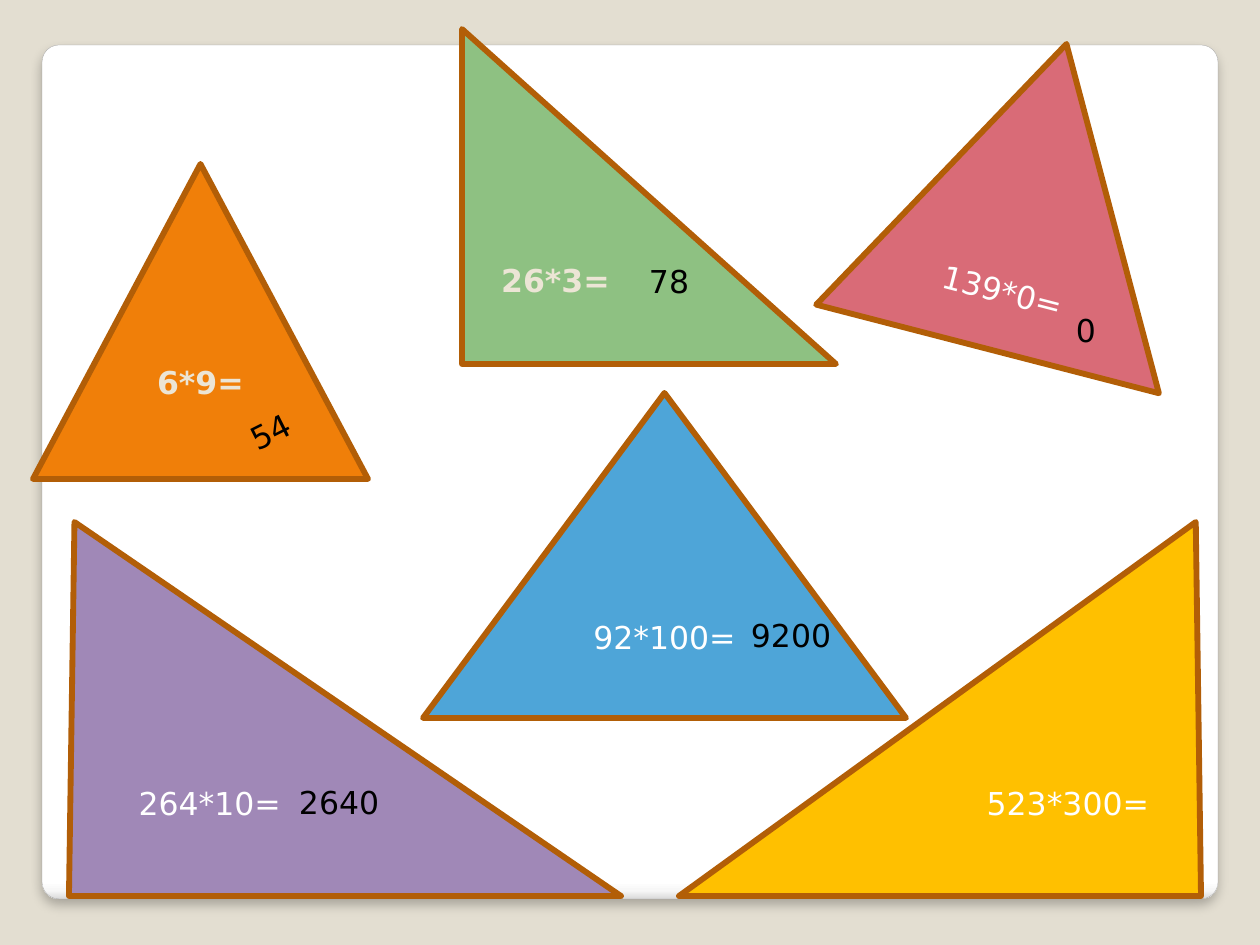
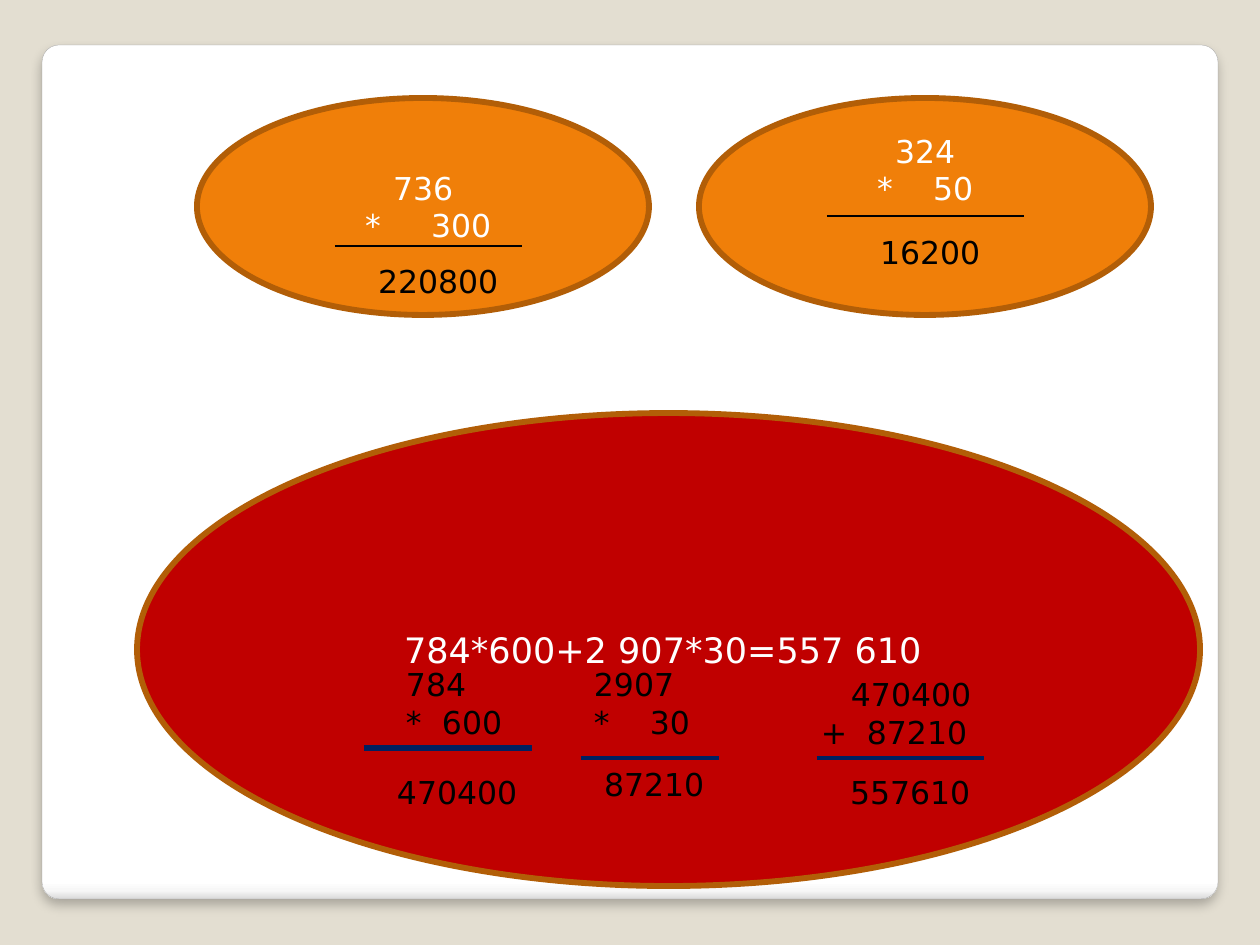
from dataclasses import dataclass

from lxml import etree
from pptx import Presentation
from pptx import util as u
from pptx.dml.color import RGBColor
from pptx.enum import shapes, text
from pptx.oxml.ns import qn

PX = u.Inches(1) / 126
FONT = "DejaVu Sans"
COLORS = {
    "page": "E3DED1", "card": "FFFFFF", "card_line": "A4A4A4", "edge": "B25E07",
    "orange": "F07F09", "blue": "4EA5D8", "purple": "A088B7", "yellow": "FFC000",
    "pink": "D96B77", "green": "8EC182", "red": "C00000", "navy": "002060",
    "black": "000000", "white": "FFFFFF", "cream": "ECE5D5",
}
CARD_STOPS = ((0, "FFFFFF"), (98, "FFFFFF"), (99, "F7F7F7"), (100, "DADADA"))
SIDE_INSET, EDGE_INSET = 13, 6
LINE_HEIGHT = 37


@dataclass(frozen=True)
class Row:
    """A line of text; each tab in it moves to the next stop, in px."""
    words: str
    stops: tuple[int, ...] = ()


@dataclass(frozen=True)
class Figure:
    box: tuple[int, int, int, int]
    color: str
    rows: tuple[Row, ...]
    kind: shapes.MSO_SHAPE = shapes.MSO_SHAPE.ISOSCELES_TRIANGLE
    apex: float | None = None
    rotation: float = 0
    bold: bool = False
    size: int = 18
    lines_above: int = 0
    lines_below: int = 0


@dataclass(frozen=True)
class Label:
    left: int
    top: int
    width: int
    rows: tuple[Row, ...]
    rotation: float = 0


@dataclass(frozen=True)
class Rule:
    start: int
    end: int
    y: int
    color: str = "navy"
    weight: float = 2.25


OVAL = shapes.MSO_SHAPE.OVAL
TASKS = (
    Figure((33, 164, 335, 315), "orange", (Row("6*9="),), bold=True, lines_below=1),
    Figure((423, 393, 483, 325), "blue", (Row("92*100="),)),
    Figure((69, 522, 552, 374), "purple", (Row("264*10="),), apex=0.01),
    Figure((679, 522, 522, 374), "yellow", (Row("523*300="),), apex=0.99),
    Figure((850, 39, 354, 315), "pink", (Row("139*0="),), rotation=14.5, lines_above=1),
    Figure((462, 29, 374, 335), "green", (Row("26*3="),), apex=0, bold=True),
)
TASK_ANSWERS = (
    Label(236, 403, 79, (Row("54"),), rotation=333.4),
    Label(636, 256, 82, (Row("78"),)),
    Label(1063, 305, 49, (Row("0"),)),
    Label(286, 777, 147, (Row("2640"),)),
    Label(738, 610, 137, (Row("9200"),)),
)
PRODUCTS = (
    Figure((197, 98, 452, 217), "orange",
           (Row("\t736", (117,)), Row("\t*\t300", (89, 155))), kind=OVAL),
    Figure((699, 98, 452, 217), "orange",
           (Row("\t324", (117,)), Row("\t*\t50", (99, 155))), kind=OVAL, lines_below=2),
    Figure((137, 413, 1063, 473), "red", (Row("784*600+2 907*30=557 610 "),),
           kind=OVAL, size=20),
)
WORKINGS = (
    Label(365, 256, 183, (Row("220800"),)),
    Label(867, 227, 183, (Row("16200"),)),
    Label(393, 659, 130, (Row("784"), Row("*\t600", (36,)))),
    Label(384, 767, 183, (Row("470400"),)),
    Label(581, 659, 186, (Row("2907"), Row("*\t30", (56,)))),
    Label(591, 759, 183, (Row("87210"),)),
    Label(808, 669, 242, (Row("\t470400", (30,)), Row("+\t87210", (46,)))),
    Label(837, 767, 183, (Row("557610"),)),
)
RULES = (
    Rule(335, 522, 246, "black", 0.75),
    Rule(827, 1024, 216, "black", 0.75),
    Rule(364, 532, 748, weight=3),
    Rule(581, 719, 758),
    Rule(817, 984, 758),
)


def px(*lengths: int) -> list[int]:
    return [round(length * PX) for length in lengths]


def rgb(name: str) -> RGBColor:
    return RGBColor.from_string(COLORS[name])


def style_shape(shape, fill: str, line: str, weight: float) -> None:
    shape.shadow.inherit = False
    shape.fill.solid()
    shape.fill.fore_color.rgb = rgb(fill)
    shape.line.color.rgb = rgb(line)
    shape.line.width = u.Pt(weight)


def write_rows(shape, rows: tuple[Row, ...], color: str, size: int = 18,
               bold: bool = False, centered: bool = False) -> None:
    frame = shape.text_frame
    frame.word_wrap = True
    frame.margin_left, frame.margin_right = px(SIDE_INSET, SIDE_INSET)
    for index, row in enumerate(rows):
        paragraph = frame.add_paragraph() if index else frame.paragraphs[0]
        center = centered and not row.stops
        paragraph.alignment = text.PP_ALIGN.CENTER if center else text.PP_ALIGN.LEFT
        if row.stops:
            tabs = etree.SubElement(paragraph._p.get_or_add_pPr(), qn("a:tabLst"))
            for stop in px(*row.stops):
                etree.SubElement(tabs, qn("a:tab"), pos=str(stop), algn="l")
        run = paragraph.add_run()
        run.text = row.words
        run.font.name = FONT
        run.font.size = u.Pt(size)
        run.font.bold = bold
        run.font.color.rgb = rgb(color)


def draw_figure(slide, figure: Figure) -> None:
    shape = slide.shapes.add_shape(figure.kind, *px(*figure.box))
    if figure.apex is not None:
        shape.adjustments[0] = figure.apex
    shape.rotation = figure.rotation
    style_shape(shape, figure.color, "edge", 3.35)
    frame = shape.text_frame
    frame.vertical_anchor = text.MSO_ANCHOR.MIDDLE
    frame.margin_top, frame.margin_bottom = px(
        EDGE_INSET + figure.lines_above * LINE_HEIGHT,
        EDGE_INSET + figure.lines_below * LINE_HEIGHT)
    write_rows(shape, figure.rows, "cream" if figure.bold else "white",
               figure.size, figure.bold, centered=True)


def draw_label(slide, label: Label) -> None:
    height = 2 * EDGE_INSET + len(label.rows) * LINE_HEIGHT
    box = slide.shapes.add_textbox(*px(label.left, label.top, label.width, height))
    box.rotation = label.rotation
    write_rows(box, label.rows, "black")


def draw_rule(slide, rule: Rule) -> None:
    line = slide.shapes.add_connector(
        shapes.MSO_CONNECTOR.STRAIGHT, *px(rule.start, rule.y, rule.end, rule.y))
    line.line.color.rgb = rgb(rule.color)
    line.line.width = u.Pt(rule.weight)
    etree.SubElement(line._element.spPr, qn("a:effectLst"))


def add_color(parent, value: str):
    return etree.SubElement(parent, qn("a:srgbClr"), val=value)


def put_card_on_master(presentation, slide) -> None:
    """Draw the shared white card on a slide, then move it behind all slides."""
    master = presentation.slide_master
    master.background.fill.solid()
    master.background.fill.fore_color.rgb = rgb("page")
    card = slide.shapes.add_shape(
        shapes.MSO_SHAPE.ROUNDED_RECTANGLE, *px(42, 45, 1176, 854))
    card.adjustments[0] = 0.02
    style_shape(card, "card", "card_line", 0.16)

    card.fill.gradient()
    card.fill.gradient_angle = 270
    properties = card._element.spPr
    stops = properties.find(".//" + qn("a:gsLst"))
    for stop in list(stops):
        stops.remove(stop)
    for percent, value in CARD_STOPS:
        add_color(etree.SubElement(stops, qn("a:gs"), pos=str(percent * 1000)), value)

    shadow = etree.SubElement(
        properties.find(qn("a:effectLst")), qn("a:outerShdw"),
        blurRad=str(u.Pt(6)), dist=str(u.Pt(4)), dir="5400000", rotWithShape="0")
    etree.SubElement(add_color(shadow, COLORS["black"]), qn("a:alpha"), val="25000")
    master.shapes.element.insert(2, card._element)


def main() -> None:
    presentation = Presentation()
    presentation.slide_width, presentation.slide_height = px(1260, 945)
    blank = presentation.slide_layouts[6]
    triangles = presentation.slides.add_slide(blank)
    ovals = presentation.slides.add_slide(blank)
    put_card_on_master(presentation, triangles)

    for slide, figures, labels, rules in (
            (triangles, TASKS, TASK_ANSWERS, ()),
            (ovals, PRODUCTS, WORKINGS, RULES)):
        for figure in figures:
            draw_figure(slide, figure)
        for label in labels:
            draw_label(slide, label)
        for rule in rules:
            draw_rule(slide, rule)
    presentation.save("out.pptx")


if __name__ == "__main__":
    main()
